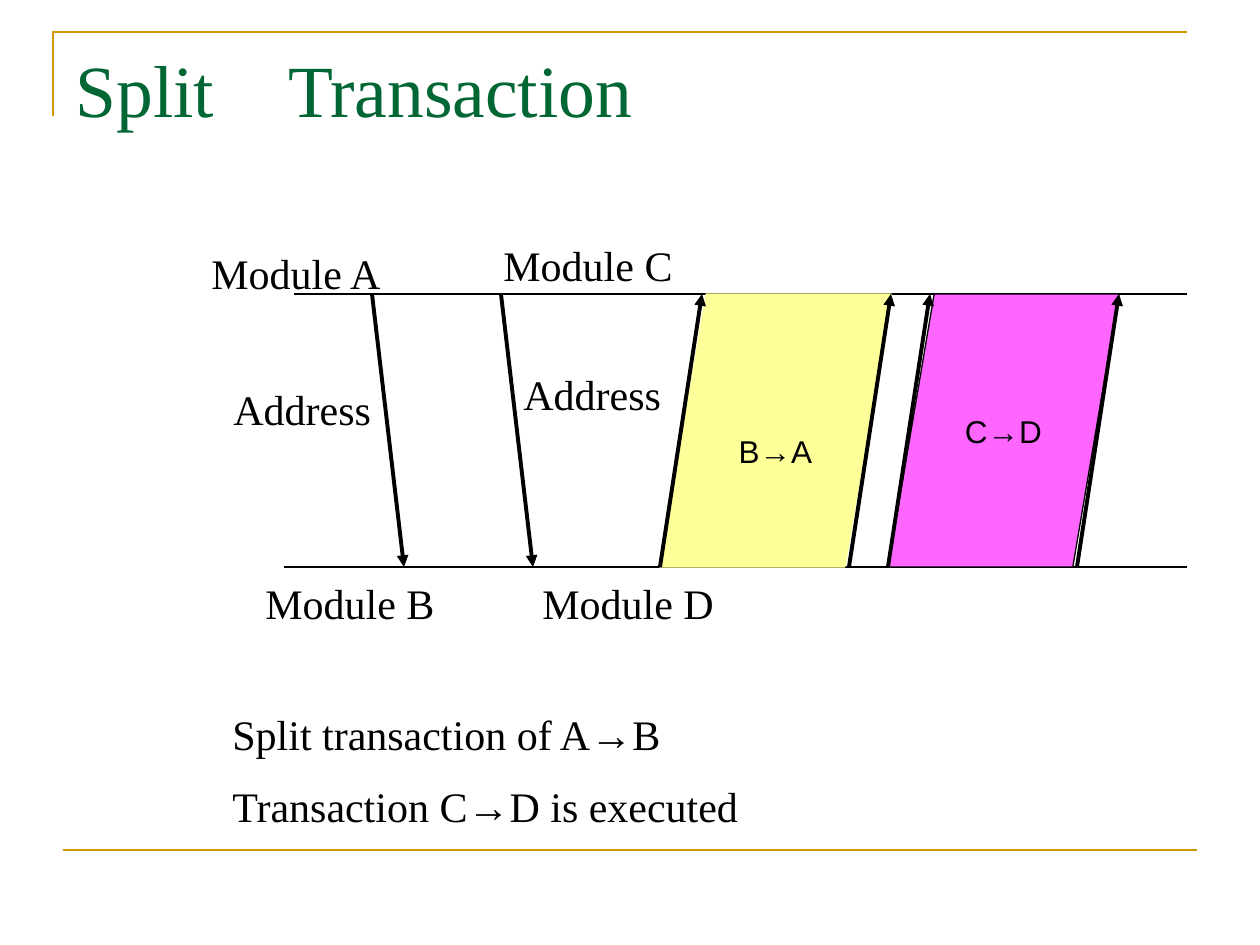
from lxml.etree import SubElement
from pptx import Presentation
from pptx.dml.color import RGBColor
from pptx.enum.shapes import MSO_CONNECTOR as Connector, MSO_SHAPE as Shape
from pptx.enum.text import MSO_ANCHOR as Anchor, PP_ALIGN as Align
from pptx.oxml.ns import qn
from pptx.util import Emu, Pt

SCALE = 914400 / 126
SERIF, SANS = "Times New Roman", "Arial"
BLACK, GOLD, GREEN = "000000", "CC9900", "006633"
YELLOW, PINK = "FFFF99", "FF66FF"
BUS_TOP, BUS_BOTTOM = 294, 567
LABEL_HEIGHT = 63


def px(length):
    """Turn whole pixels into EMU."""
    return Emu(round(length * SCALE))


def box(*lengths):
    """Turn several pixel lengths into EMU."""
    return [px(length) for length in lengths]


def rgb(code):
    """Make a colour from a hex string."""
    return RGBColor.from_string(code)


def write(frame, lines, size=24, font=SERIF, color=BLACK, align=Align.LEFT,
          anchor=Anchor.TOP, wrap=True, gap=0, inset=6):
    """Fill a text frame with one paragraph for each line."""
    frame.word_wrap = wrap
    frame.vertical_anchor = anchor
    frame.margin_top = px(inset)
    frame.text = "\n".join(lines)
    for index, paragraph in enumerate(frame.paragraphs):
        paragraph.alignment = align
        paragraph.space_before = Pt(gap if index else 0)
        for run in paragraph.runs:
            run.font.size = Pt(size)
            run.font.name = font
            run.font.color.rgb = rgb(color)


def add_label(shapes, lines, left, top, width, height=LABEL_HEIGHT, **style):
    """Add a text box."""
    label = shapes.add_textbox(*box(left, top, width, height))
    write(label.text_frame, lines, **style)


def add_rule(shapes, start, end, color=BLACK, weight=0.75, arrow=False):
    """Add a straight line, with an arrowhead at its end if asked."""
    rule = shapes.add_connector(Connector.STRAIGHT, *box(*start, *end))
    rule.line.color.rgb = rgb(color)
    rule.line.width = Pt(weight)
    if arrow:
        SubElement(rule.line._get_or_add_ln(), qn("a:tailEnd"), type="triangle")
    SubElement(rule._element.spPr, qn("a:effectLst"))


def add_arrow(shapes, start, end):
    """Add a heavy arrow between the two buses."""
    add_rule(shapes, start, end, weight=2.25, arrow=True)


def add_frame(shapes):
    """Add the gold corner and the gold line at the foot."""
    builder = shapes.build_freeform(px(53), px(116), scale=1.0)
    builder.add_line_segments([box(53, 32), box(1187, 32)], close=False)
    corner = builder.convert_to_shape()
    corner.shadow.inherit = False
    corner.fill.background()
    corner.line.color.rgb = rgb(GOLD)
    corner.line.width = Pt(1.5)
    add_rule(shapes, (63, 850), (1197, 850), GOLD, 1.5)


def add_title(title):
    """Place and format the title."""
    title.left, title.top, title.width, title.height = box(63, 38, 1134, 158)
    write(title.text_frame, ["Split　Transaction"], size=42, color=GREEN)


def add_transfer(shapes, left, route, fill, outline, inset=6):
    """Add a slanted data block between two arrows."""
    transfer = shapes.add_group_shape().shapes
    data = transfer.add_shape(Shape.FLOWCHART_DATA,
                              *box(left, BUS_TOP, 231, BUS_BOTTOM - BUS_TOP))
    data.shadow.inherit = False
    data.fill.solid()
    data.fill.fore_color.rgb = rgb(fill)
    data.line.color.rgb = rgb(outline)
    data.line.width = Pt(0.75)
    write(data.text_frame, [route], size=18, font=SANS, align=Align.CENTER,
          anchor=Anchor.MIDDLE, wrap=False, inset=inset)
    for foot in (left, left + 189):
        add_arrow(transfer, (foot, BUS_BOTTOM), (foot + 42, BUS_TOP))


def add_request(shapes, start, module, module_place, address_place):
    """Add an address arrow with its module and address labels."""
    request = shapes.add_group_shape().shapes
    add_arrow(request, (start, BUS_TOP), (start + 32, BUS_BOTTOM))
    add_label(request, ["Address"], *address_place)
    add_label(request, [module], *module_place)


def main():
    """Build the slide and save it."""
    deck = Presentation()
    deck.slide_width, deck.slide_height = box(1260, 945)
    slide = deck.slides.add_slide(deck.slide_layouts[5])
    shapes = slide.shapes

    add_frame(shapes)
    add_title(shapes.title)
    add_rule(shapes, (294, BUS_TOP), (1187, BUS_TOP))
    add_rule(shapes, (284, BUS_BOTTOM), (1187, BUS_BOTTOM))
    add_transfer(shapes, 660, "B→A", YELLOW, YELLOW, inset=46)
    add_request(shapes, 372, "Module A", (199, 242, 262), (221, 378, 242))
    add_label(shapes, ["Module B"], 253, 572, 262)
    add_label(shapes, ["Module D"], 530, 572, 252)
    add_request(shapes, 501, "Module C", (491, 234, 284), (511, 363, 242))
    add_label(shapes, ["Split transaction of A→B", "Transaction C→D is executed"],
              220, 703, 914, 139, gap=12)
    add_transfer(shapes, 888, "C→D", PINK, BLACK)
    deck.save("out.pptx")


if __name__ == "__main__":
    main()
